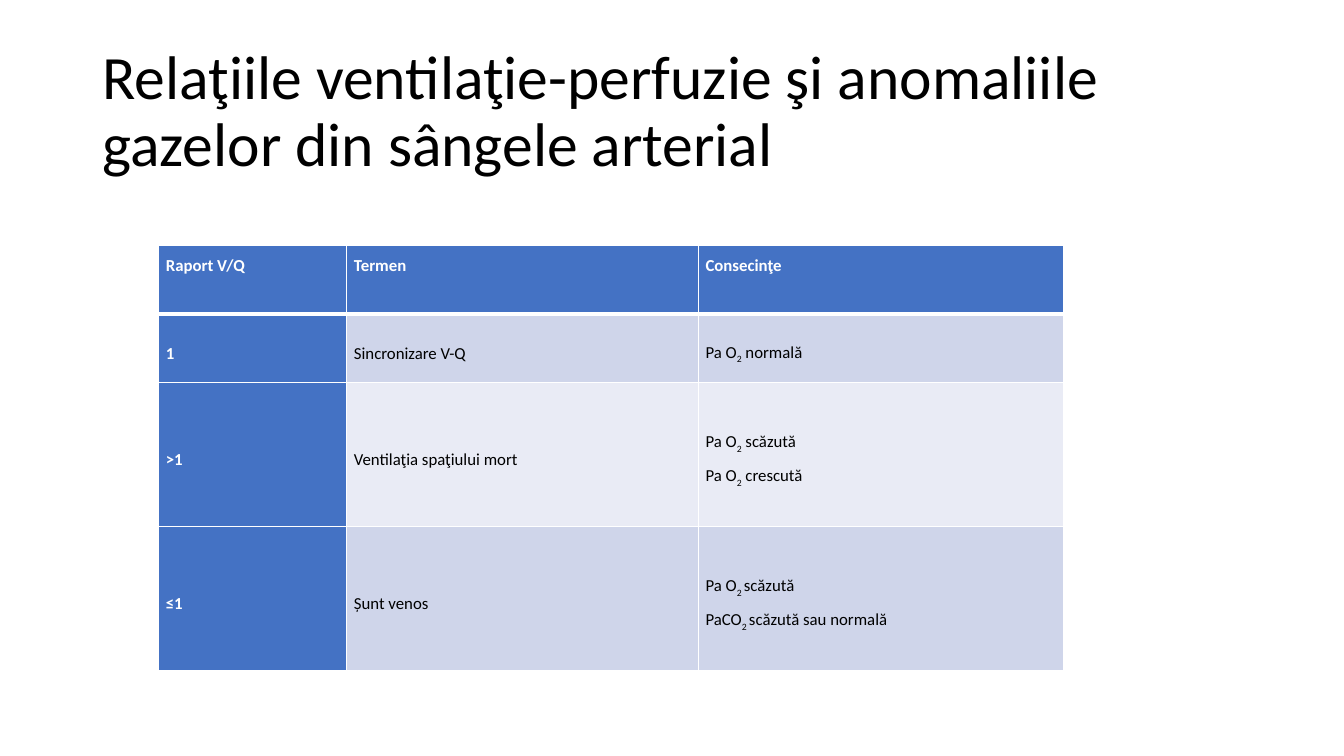
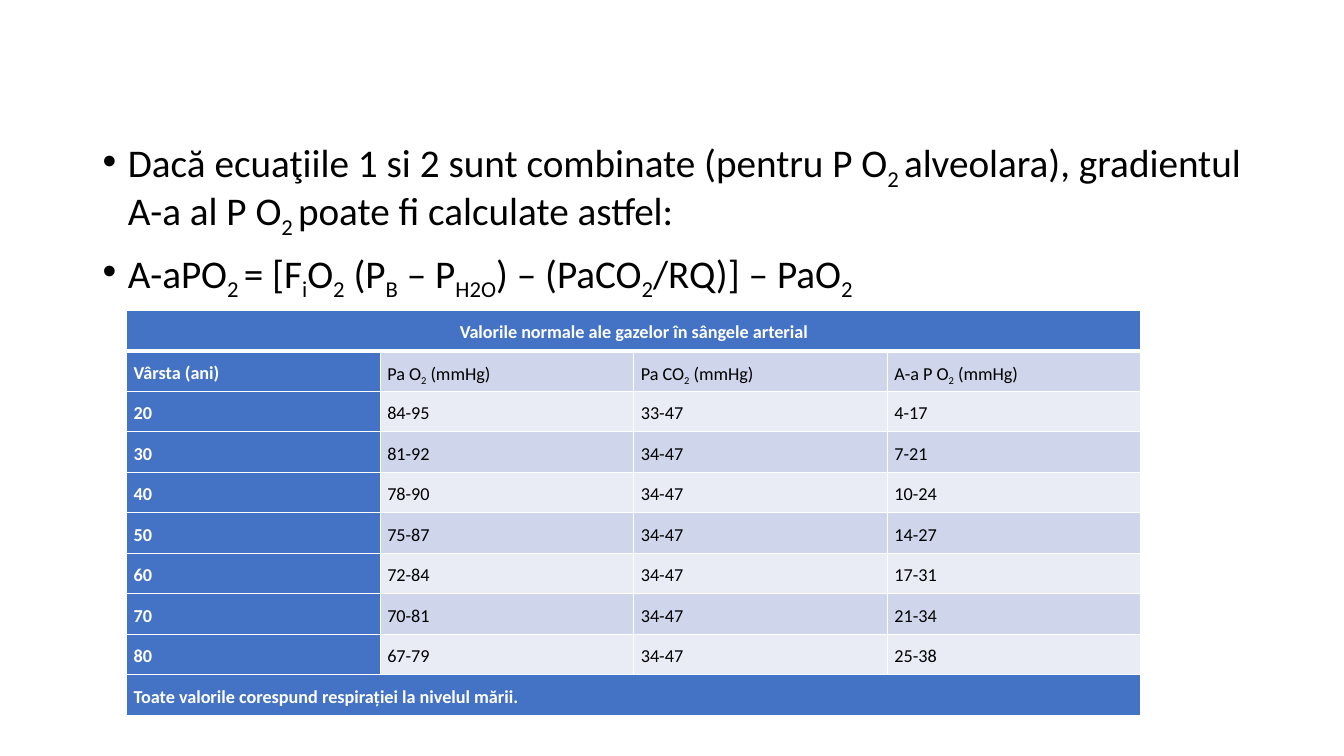
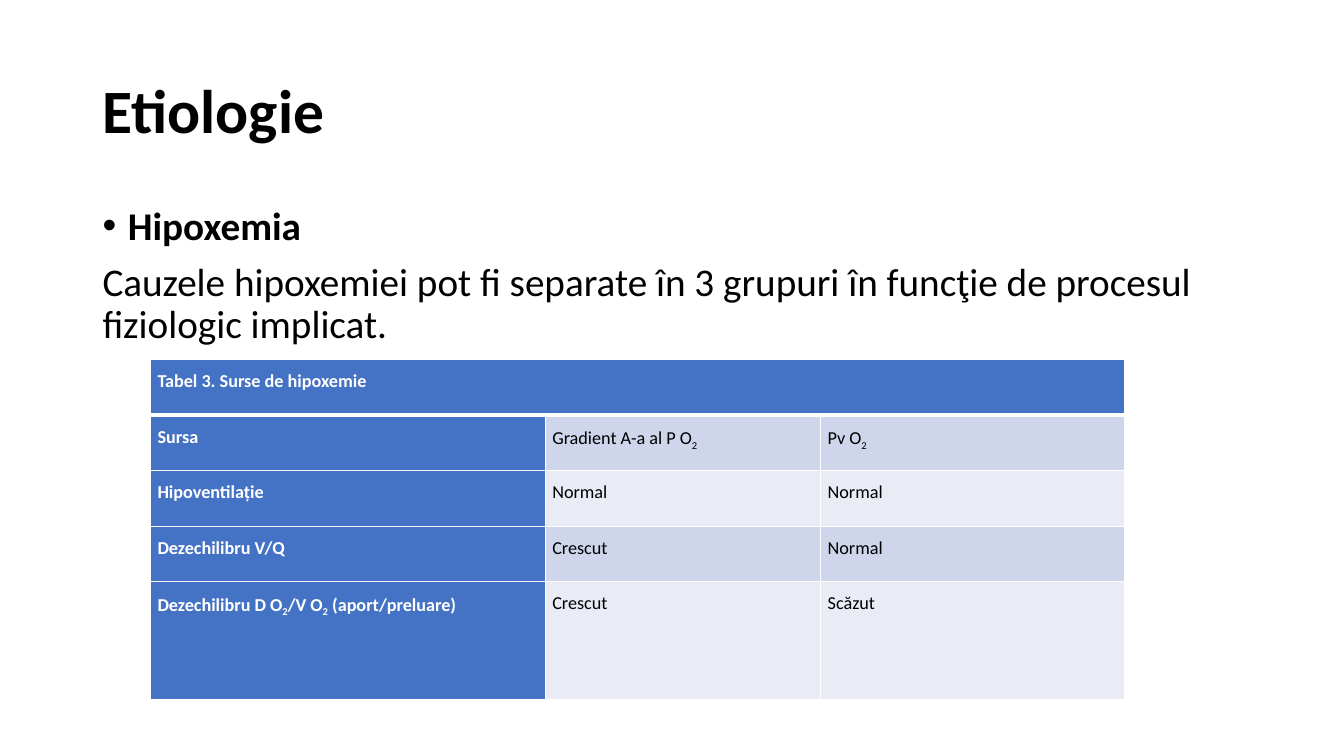
from pptx import Presentation
from pptx.dml.color import RGBColor
from pptx.enum.text import MSO_ANCHOR, MSO_AUTO_SIZE, PP_ALIGN
from pptx.oxml.ns import qn
from pptx.util import Cm, Pt
from lxml import etree

TOP, MID = MSO_ANCHOR.TOP, MSO_ANCHOR.MIDDLE
LEFT, CENTER, JUST = PP_ALIGN.LEFT, PP_ALIGN.CENTER, PP_ALIGN.JUSTIFY
NO_FIT = MSO_AUTO_SIZE.NONE

# Shared look
FONT = "Calibri"
COLORS = {"text": "000000", "white": "FFFFFF", "head": "4472C4",
          "odd": "CFD5EA", "even": "E9EBF5"}
EDGE, WIDTH = 2.33, 29.21
INDENT = 0.64
FULL, LIST = 1, 5  # layouts: title with body, title only


def color(name):
    return RGBColor.from_string(COLORS[name])


def add_text(para, text, size, tint="text", bold=False):
    """Add runs; parts between underscores are subscripts."""
    for i, part in enumerate(text.split("_")):
        if not part:
            continue
        run = para.add_run()
        run.text = part
        font = run.font
        font.name, font.size, font.bold = FONT, Pt(size), bold
        font.color.rgb = color(tint)
        if i % 2:
            run._r.get_or_add_rPr().set("baseline", "-25000")


def place(shape, top, height, anchor):
    shape.left, shape.top = Cm(EDGE), Cm(top)
    shape.width, shape.height = Cm(WIDTH), Cm(height)
    frame = shape.text_frame
    frame.word_wrap, frame.auto_size = True, NO_FIT
    frame.vertical_anchor = anchor
    return frame


def set_title(slide, text, bold=False):
    frame = place(slide.shapes.title, 1.01, 3.68, MID)
    para = frame.paragraphs[0]
    para.alignment, para.line_spacing = LEFT, 0.9
    add_text(para, text, 44, bold=bold)


def set_bullet(para, shown):
    props = para._p.get_or_add_pPr()
    step = Cm(INDENT) if shown else 0
    props.set("marL", str(step))
    props.set("indent", str(-step))
    if shown:
        etree.SubElement(props, qn("a:buFont"), typeface="Arial")
        etree.SubElement(props, qn("a:buChar"), char="•")
    else:
        etree.SubElement(props, qn("a:buNone"))


def set_body(slide, top, items):
    """Each item is (text, bullet, bold)."""
    frame = place(slide.placeholders[1], top, 4.45, TOP)
    for i, (text, bullet, bold) in enumerate(items):
        para = frame.add_paragraph() if i else frame.paragraphs[0]
        para.alignment, para.line_spacing = LEFT, 0.9
        para.space_before = Pt(10)
        set_bullet(para, bullet)
        add_text(para, text, 28, bold=bold)


def set_edges(cell, row):
    """White borders, thick between the heading row and the rest."""
    props = cell._tc.get_or_add_tcPr()
    thick = {"T": row == 1, "B": row == 0}
    for side in "LRTB":
        width = Pt(3 if thick.get(side) else 1)
        line = etree.SubElement(props, qn(f"a:ln{side}"), w=str(width))
        fill = etree.SubElement(line, qn("a:solidFill"))
        etree.SubElement(fill, qn("a:srgbClr"), val=COLORS["white"])


def add_grid(slide, left, top, cols, heights, rows, size,
             anchor=TOP, first=JUST):
    """Draw a table; a row with a single text spans all columns."""
    frame = slide.shapes.add_table(len(rows), len(cols), Cm(left), Cm(top),
                                   Cm(sum(cols)), Cm(sum(heights)))
    table = frame.table
    table.first_col = True
    for col, width in zip(table.columns, cols):
        col.width = Cm(width)
    for r, texts in enumerate(rows):
        table.rows[r].height = Cm(heights[r])
        span = len(texts) == 1
        if span:
            table.cell(r, 0).merge(table.cell(r, len(cols) - 1))
        for c in range(len(cols)):
            cell = table.cell(r, c)
            head = r == 0 or c == 0 or span
            cell.margin_left = cell.margin_right = Cm(0.18)
            cell.margin_top = cell.margin_bottom = 0
            cell.vertical_anchor = anchor if r else TOP
            set_edges(cell, r)
            cell.fill.solid()
            band = "odd" if r % 2 else "even"
            cell.fill.fore_color.rgb = color("head" if head else band)
            if c >= len(texts):
                continue
            for i, line in enumerate(texts[c].split("\n")):
                box = cell.text_frame
                para = box.add_paragraph() if i else box.paragraphs[0]
                para.alignment = JUST if r else first
                para.line_spacing = 1.5
                add_text(para, line, size, "white" if head else "text", head)


def ratio_slide(deck):
    slide = deck.slides.add_slide(deck.slide_layouts[LIST])
    set_title(slide, "Relaţiile ventilaţie-perfuzie şi anomaliile "
                     "gazelor din sângele arterial")
    rows = [
        ["Raport V/Q", "Termen", "Consecinţe"],
        ["1", "Sincronizare V-Q", "Pa O_2_ normală"],
        [">1", "Ventilaţia spaţiului mort",
         "Pa O_2_ scăzută\nPa O_2_ crescută"],
        ["≤1", "Șunt venos",
         "Pa O_2 _scăzută\nPaCO_2 _scăzută sau normală"],
    ]
    add_grid(slide, 4, 6.18, [4.74, 8.86, 9.2], [1.73, 1.73, 3.63, 3.63],
             rows, 12, anchor=MID)


def normal_slide(deck):
    slide = deck.slides.add_slide(deck.slide_layouts[FULL])
    title = slide.shapes.title.element
    title.getparent().remove(title)
    set_body(slide, 3.38, [
        ("Dacă ecuaţiile 1 si 2 sunt combinate (pentru P O_2 _alveolara), "
         "gradientul A-a al P O_2 _poate fi calculate astfel:", True, False),
        ("A-aPO_2 _= [F_i_O_2_ (P_B_ – P_H2O_) – (PaCO_2_/RQ)] – PaO_2_",
         True, False),
    ])
    rows = [
        ["Valorile normale ale gazelor în sângele arterial"],
        ["Vârsta (ani)", "Pa O_2_ (mmHg)", "Pa CO_2_ (mmHg)",
         "A-a P O_2_ (mmHg)"],
        ["20", "84-95", "33-47", "4-17"],
        ["30", "81-92", "34-47", "7-21"],
        ["40", "78-90", "34-47", "10-24"],
        ["50", "75-87", "34-47", "14-27"],
        ["60", "72-84", "34-47", "17-31"],
        ["70", "70-81", "34-47", "21-34"],
        ["80", "67-79", "34-47", "25-38"],
        ["Toate valorile corespund respirației la nivelul mării."],
    ]
    add_grid(slide, 3.19, 7.82, [6.39] * 4, [1.02] * len(rows), rows, 13,
             first=CENTER)


def cause_slide(deck):
    slide = deck.slides.add_slide(deck.slide_layouts[FULL])
    set_title(slide, "Etiologie", bold=True)
    set_body(slide, 5.07, [
        ("Hipoxemia", True, True),
        ("Cauzele hipoxemiei pot fi separate în 3 grupuri în funcţie de "
         "procesul fiziologic implicat.", False, False),
    ])
    rows = [
        ["Tabel 3. Surse de hipoxemie"],
        ["Sursa", "Gradient A-a al P O_2_", "Pv O_2_"],
        ["Hipoventilație", "Normal", "Normal"],
        ["Dezechilibru V/Q", "Crescut", "Normal"],
        ["Dezechilibru D O_2_/V O_2_ (aport/preluare)", "Crescut", "Scăzut"],
    ]
    add_grid(slide, 3.79, 9.06, [9.95, 6.94, 7.67], [1.4] * 4 + [2.97],
             rows, 13)


def main():
    deck = Presentation()
    deck.slide_width, deck.slide_height = Cm(33.87), Cm(19.05)
    ratio_slide(deck)
    normal_slide(deck)
    cause_slide(deck)
    deck.save("out.pptx")


if __name__ == "__main__":
    main()
